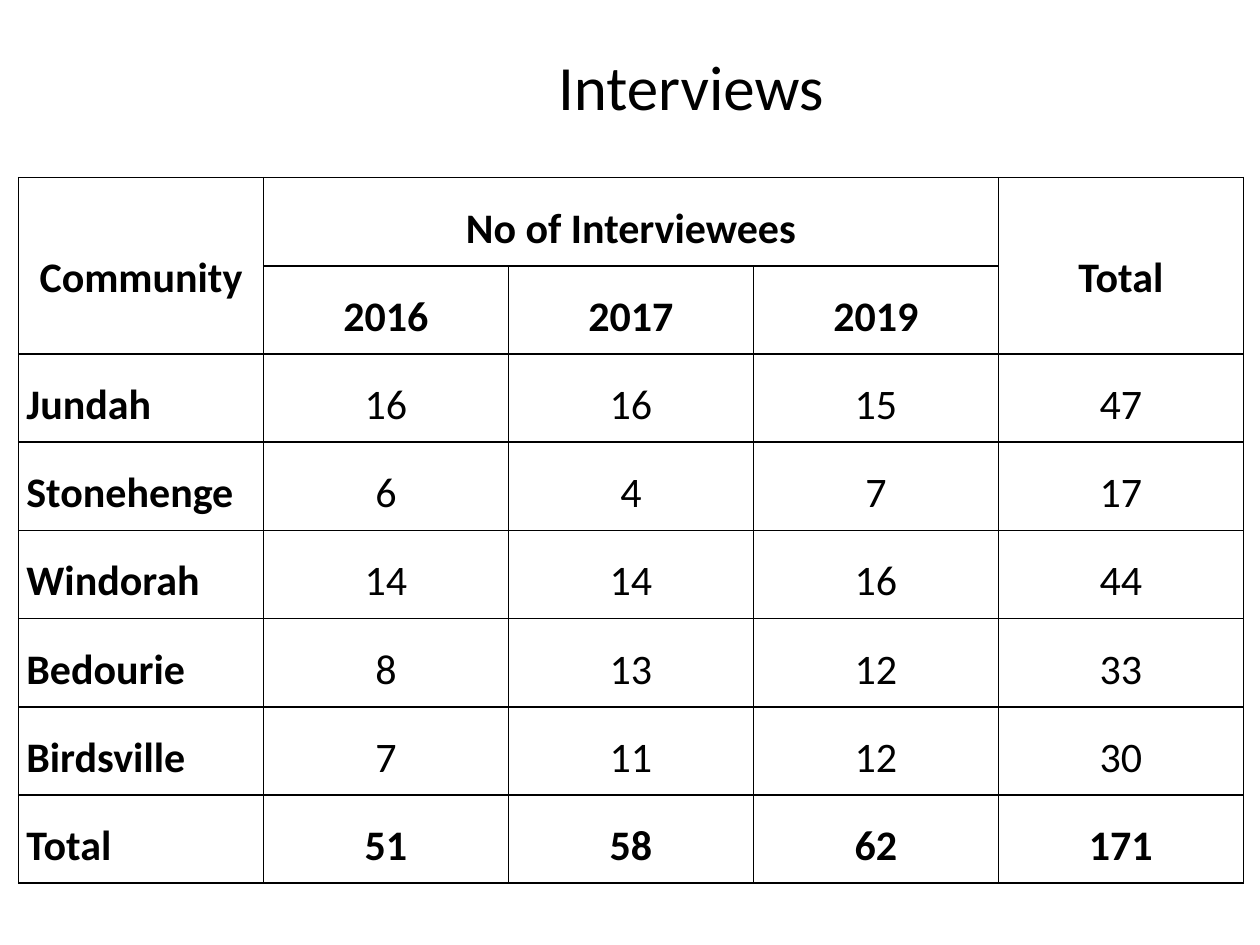
from lxml.etree import SubElement
from pptx import Presentation
from pptx.dml.color import RGBColor
from pptx.enum.text import MSO_ANCHOR, MSO_AUTO_SIZE, PP_ALIGN
from pptx.oxml.ns import qn
from pptx.util import Pt

COLORS = {"ink": "000000", "paper": "FFFFFF"}
FONT = "Calibri"
COLUMN_WIDTH, ROW_HEIGHT = 140, 50.4

HEADER = [
    ["Community", "No of Interviewees", "", "", "Total"],
    ["", "2016", "2017", "2019", ""],
]
COMMUNITIES = [
    ["Jundah", 16, 16, 15, 47],
    ["Stonehenge", 6, 4, 7, 17],
    ["Windorah", 14, 14, 16, 44],
    ["Bedourie", 8, 13, 12, 33],
    ["Birdsville", 7, 11, 12, 30],
]
TOTALS = ["Total", 51, 58, 62, 171]


def add_text(paragraph, text, size, bold=False):
    run = paragraph.add_run()
    run.text = text
    run.font.name = FONT
    run.font.size = Pt(size)
    run.font.bold = bold
    run.font.color.rgb = RGBColor.from_string(COLORS["ink"])


def add_title(slide, text):
    title = slide.shapes.add_textbox(Pt(311.8), Pt(23.8), Pt(187), Pt(51))
    title.text_frame.word_wrap = True
    title.text_frame.auto_size = MSO_AUTO_SIZE.SHAPE_TO_FIT_TEXT
    add_text(title.text_frame.paragraphs[0], text, 36)


def style_cell(cell):
    cell.margin_left = cell.margin_right = Pt(4.5)
    cell.margin_top = cell.margin_bottom = 0
    # Borders have to come before the fill in the cell properties
    properties = cell._tc.get_or_add_tcPr()
    for side in ("lnL", "lnR", "lnT", "lnB"):
        border = SubElement(properties, qn(f"a:{side}"), w=str(Pt(1)))
        fill = SubElement(border, qn("a:solidFill"))
        SubElement(fill, qn("a:srgbClr"), val=COLORS["ink"])
    cell.fill.solid()
    cell.fill.fore_color.rgb = RGBColor.from_string(COLORS["paper"])


def add_interview_table(slide):
    rows = HEADER + COMMUNITIES + [TOTALS]
    row_count, column_count = len(rows), len(TOTALS)
    table = slide.shapes.add_table(
        row_count, column_count, Pt(10.6), Pt(101.5),
        Pt(COLUMN_WIDTH * column_count), Pt(ROW_HEIGHT * row_count)).table
    table.first_row = table.horz_banding = False
    for column in table.columns:
        column.width = Pt(COLUMN_WIDTH)
    for row in table.rows:
        row.height = Pt(ROW_HEIGHT)

    # Header spans
    for column in (0, column_count - 1):
        table.cell(0, column).merge(table.cell(1, column))
        table.cell(0, column).vertical_anchor = MSO_ANCHOR.MIDDLE
    table.cell(0, 1).merge(table.cell(0, 3))

    # Headings and totals are bold; community names are left-aligned
    for r, values in enumerate(rows):
        is_header = r < len(HEADER)
        for c, value in enumerate(values):
            cell = table.cell(r, c)
            style_cell(cell)
            if value == "":
                continue
            paragraph = cell.text_frame.paragraphs[0]
            paragraph.line_spacing = 1.5
            paragraph.alignment = (
                PP_ALIGN.CENTER if is_header or c else PP_ALIGN.LEFT)
            add_text(paragraph, str(value), 24,
                     bold=is_header or c == 0 or values is TOTALS)


def main():
    deck = Presentation()
    deck.slide_width, deck.slide_height = Pt(720), Pt(540)
    slide = deck.slides.add_slide(deck.slide_layouts[6])
    add_interview_table(slide)
    add_title(slide, "Interviews")
    deck.save("out.pptx")


if __name__ == "__main__":
    main()
